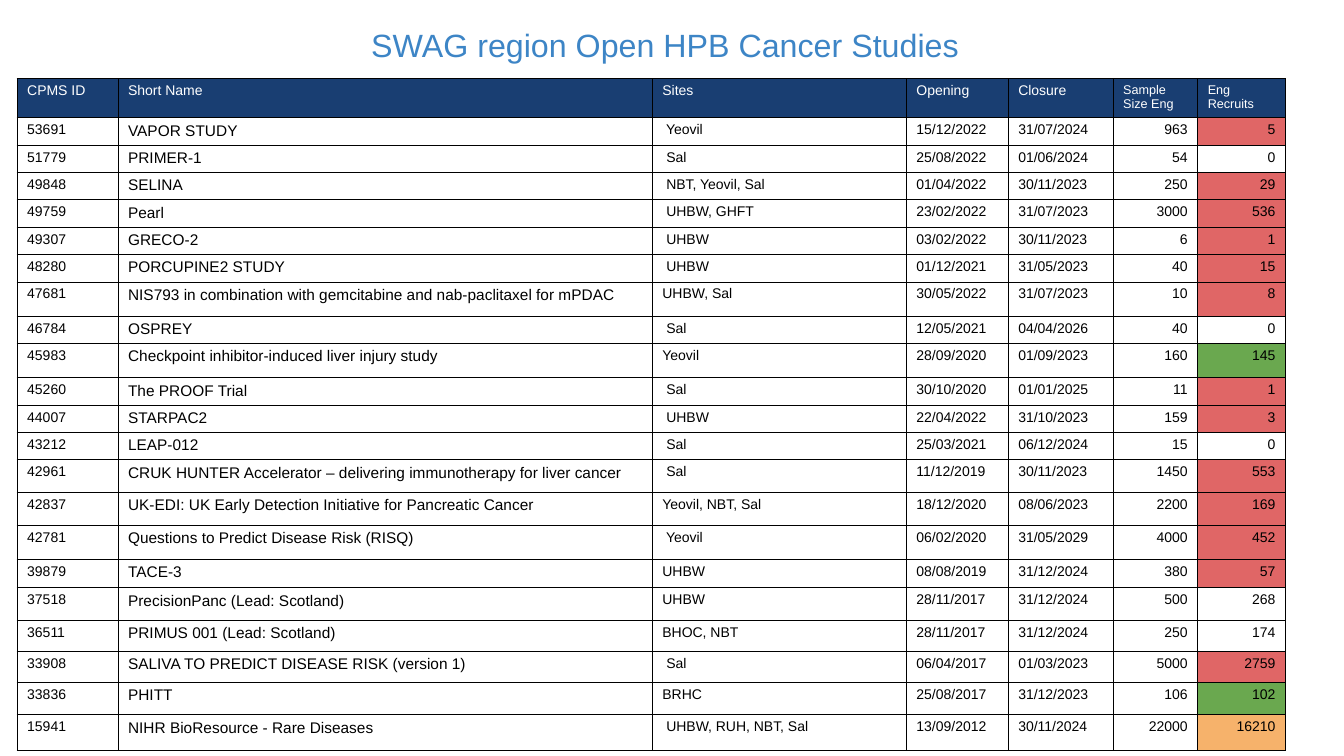
from lxml import etree
from pptx import Presentation, util as u
from pptx.dml.color import RGBColor
from pptx.enum import text
from pptx.oxml import ns

NAVY = RGBColor(0x19, 0x3E, 0x72)
BLUE = RGBColor(0x3D, 0x85, 0xC6)
RED = RGBColor(0xE0, 0x66, 0x66)
GREEN = RGBColor(0x6A, 0xA8, 0x4F)
AMBER = RGBColor(0xF6, 0xB2, 0x6B)
WHITE = RGBColor(0xFF, 0xFF, 0xFF)
BLACK = RGBColor(0, 0, 0)

LEFT, CENTER, RIGHT = text.PP_ALIGN.LEFT, text.PP_ALIGN.CENTER, text.PP_ALIGN.RIGHT

HEADS = ["CPMS ID", "Short Name", "Sites", "Opening", "Closure", "Sample Size Eng", "Eng Recruits"]
WIDTHS = [100, 530, 252, 101, 104, 84, 87]
HEAD_SIZES = [10, 10, 10, 10, 10, 9, 9]
BODY_SIZES = [10, 11, 10, 10, 10, 10, 10]
ALIGNS = [LEFT] * 5 + [RIGHT] * 2
HEAD_ROW = 39

STUDIES = [
    (26, RED, "53691", "VAPOR STUDY", " Yeovil", "15/12/2022", "31/07/2024", "963", "5"),
    (26, WHITE, "51779", "PRIMER-1", " Sal", "25/08/2022", "01/06/2024", "54", "0"),
    (26, RED, "49848", "SELINA", " NBT, Yeovil, Sal", "01/04/2022", "30/11/2023", "250", "29"),
    (26, RED, "49759", "Pearl", " UHBW, GHFT", "23/02/2022", "31/07/2023", "3000", "536"),
    (26, RED, "49307", "GRECO-2", " UHBW", "03/02/2022", "30/11/2023", "6", "1"),
    (27, RED, "48280", "PORCUPINE2 STUDY", " UHBW", "01/12/2021", "31/05/2023", "40", "15"),
    (34, RED, "47681", "NIS793 in combination with gemcitabine and nab-paclitaxel for mPDAC",
     "UHBW, Sal", "30/05/2022", "31/07/2023", "10", "8"),
    (27, WHITE, "46784", "OSPREY", " Sal", "12/05/2021", "04/04/2026", "40", "0"),
    (34, GREEN, "45983", "Checkpoint inhibitor-induced liver injury study",
     "Yeovil", "28/09/2020", "01/09/2023", "160", "145"),
    (26, RED, "45260", "The PROOF Trial", " Sal", "30/10/2020", "01/01/2025", "11", "1"),
    (26, RED, "44007", "STARPAC2", " UHBW", "22/04/2022", "31/10/2023", "159", "3"),
    (26, WHITE, "43212", "LEAP-012", " Sal", "25/03/2021", "06/12/2024", "15", "0"),
    (32, RED, "42961", "CRUK HUNTER Accelerator – delivering immunotherapy for liver cancer",
     " Sal", "11/12/2019", "30/11/2023", "1450", "553"),
    (33, RED, "42837", "UK-EDI: UK Early Detection Initiative for Pancreatic Cancer",
     "Yeovil, NBT, Sal", "18/12/2020", "08/06/2023", "2200", "169"),
    (34, RED, "42781", "Questions to Predict Disease Risk (RISQ)",
     " Yeovil", "06/02/2020", "31/05/2029", "4000", "452"),
    (28, RED, "39879", "TACE-3", "UHBW", "08/08/2019", "31/12/2024", "380", "57"),
    (32, WHITE, "37518", "PrecisionPanc (Lead: Scotland)", "UHBW", "28/11/2017", "31/12/2024", "500", "268"),
    (31, WHITE, "36511", "PRIMUS 001 (Lead: Scotland)", "BHOC, NBT", "28/11/2017", "31/12/2024", "250", "174"),
    (31, RED, "33908", "SALIVA TO PREDICT DISEASE RISK (version 1)",
     " Sal", "06/04/2017", "01/03/2023", "5000", "2759"),
    (32, GREEN, "33836", "PHITT", "BRHC", "25/08/2017", "31/12/2023", "106", "102"),
    (35, AMBER, "15941", "NIHR BioResource - Rare Diseases",
     " UHBW, RUH, NBT, Sal", "13/09/2012", "30/11/2024", "22000", "16210"),
]


class Deck:
    font = "Arial"
    unit = u.Inches(0.01)
    cols, rows = 1333, 750

    def __init__(self):
        self.prs = Presentation()
        self.prs.slide_width = self.cols * self.unit
        self.prs.slide_height = self.rows * self.unit
        self.slide = self.prs.slides.add_slide(self.prs.slide_layouts[6])

    def grid(self, *spans):
        return [span * self.unit for span in spans]

    def label(self, frame, words, size, color, align):
        para = frame.paragraphs[0]
        para.text = words
        para.alignment = align
        para.font.name = self.font
        para.font.size = u.Pt(size)
        para.font.bold = False
        para.font.color.rgb = color

    def title(self, words, *box):
        frame = self.slide.shapes.add_textbox(*self.grid(*box)).text_frame
        frame.word_wrap = True
        frame.margin_left = frame.margin_right = self.unit * 10
        frame.margin_top = frame.margin_bottom = self.unit * 10
        self.label(frame, words, 23, BLUE, CENTER)

    def border(self, cell):
        props = cell._tc.get_or_add_tcPr()
        for side in ("a:lnL", "a:lnR", "a:lnT", "a:lnB"):
            line = etree.SubElement(props, ns.qn(side), w=str(u.Pt(0.75)))
            fill = etree.SubElement(line, ns.qn("a:solidFill"))
            etree.SubElement(fill, ns.qn("a:srgbClr"), val=str(BLACK))

    def cell(self, cell, words, size, color, align, fill):
        cell.margin_left = cell.margin_right = self.unit * 10
        cell.margin_top = cell.margin_bottom = u.Pt(3.15)
        self.border(cell)
        cell.fill.solid()
        cell.fill.fore_color.rgb = fill
        self.label(cell.text_frame, words, size, color, align)

    def table(self, left, top):
        highs = [HEAD_ROW] + [study[0] for study in STUDIES]
        box = self.grid(left, top, sum(WIDTHS), sum(highs))
        table = self.slide.shapes.add_table(len(highs), len(WIDTHS), *box).table
        table.horz_banding = False
        for col, width in zip(table.columns, self.grid(*WIDTHS)):
            col.width = width
        for row, high in zip(table.rows, self.grid(*highs)):
            row.height = high
        for col, (head, size) in enumerate(zip(HEADS, HEAD_SIZES)):
            self.cell(table.cell(0, col), head, size, WHITE, LEFT, NAVY)
        for row, (_, mark, *facts) in enumerate(STUDIES, 1):
            fills = [WHITE] * (len(facts) - 1) + [mark]
            for col, (fact, size, align, fill) in enumerate(zip(facts, BODY_SIZES, ALIGNS, fills)):
                self.cell(table.cell(row, col), fact, size, BLACK, align, fill)


def main():
    deck = Deck()
    deck.title("SWAG region Open HPB Cancer Studies ", 17, 15, 1295, 59)
    deck.table(17, 78)
    deck.prs.save("out.pptx")


if __name__ == "__main__":
    main()
